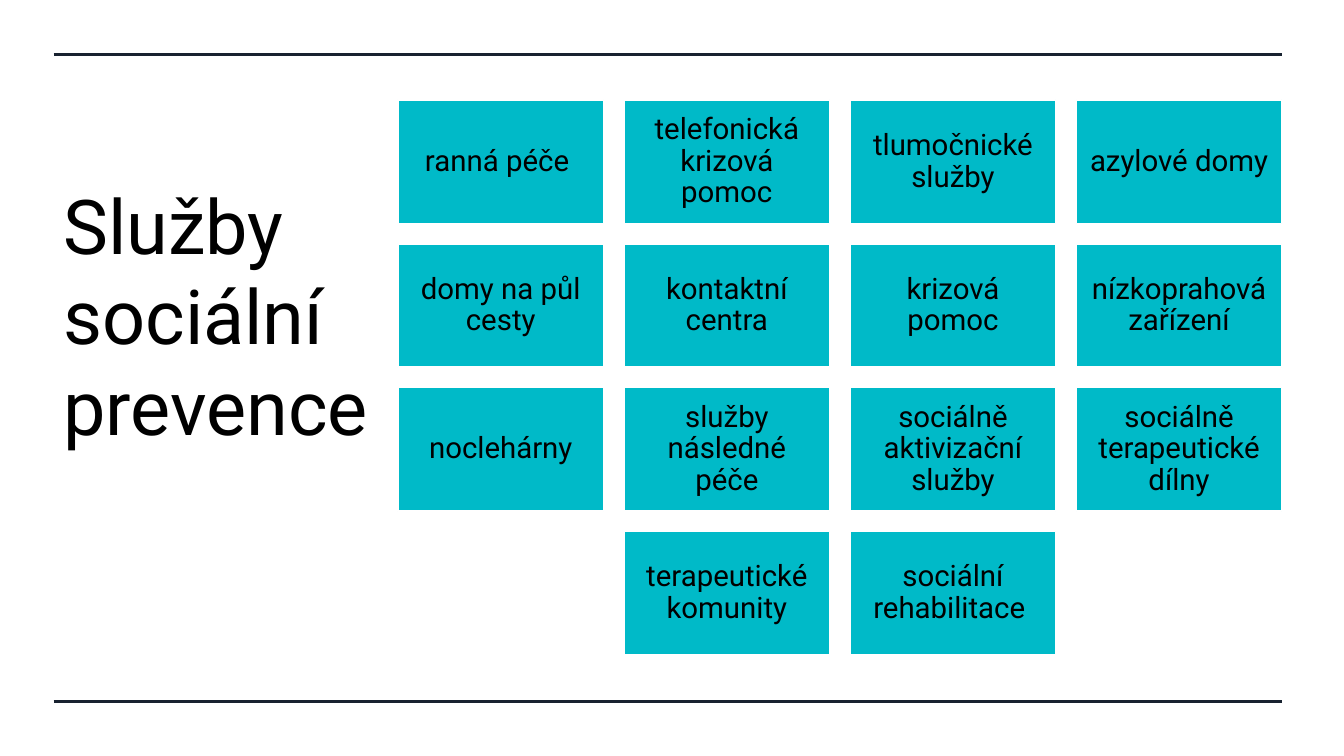
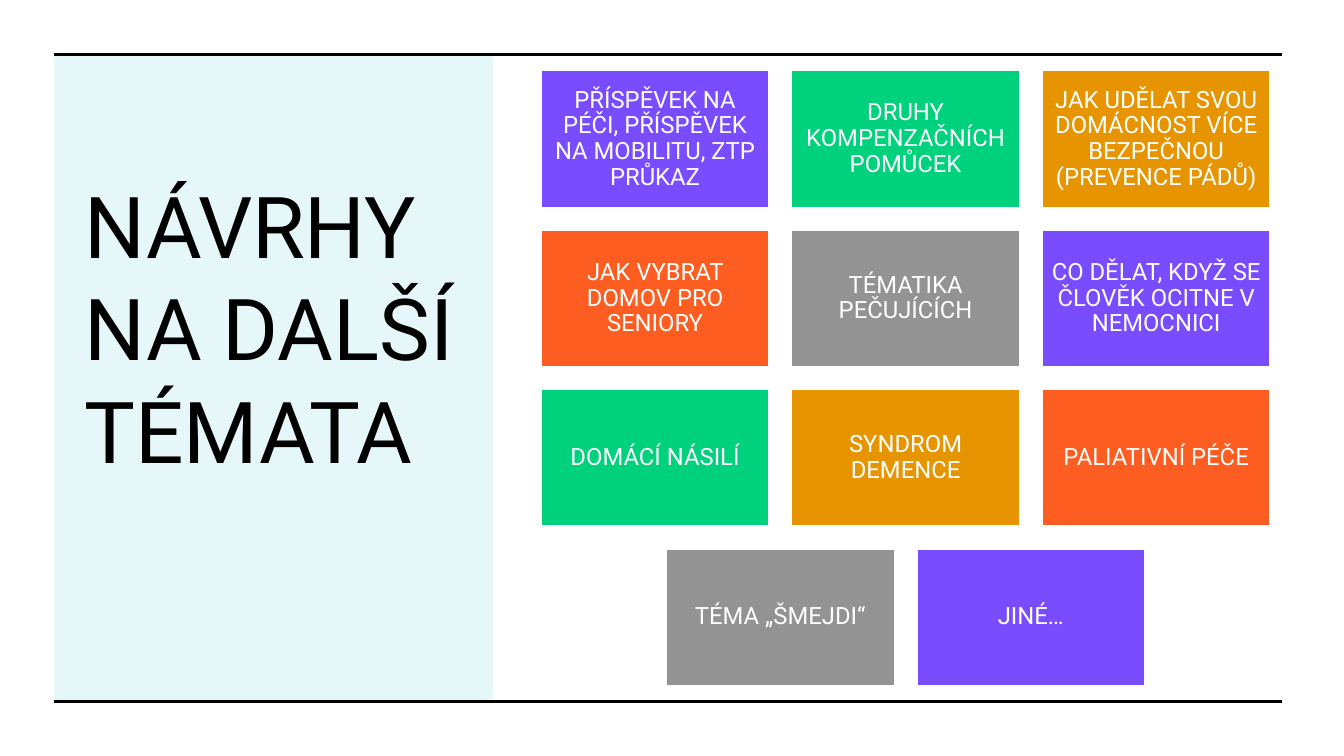
from dataclasses import dataclass
from math import ceil
from lxml import etree
from pptx import Presentation
from pptx.dml.color import RGBColor
from pptx.enum import shapes, text
from pptx.oxml import ns
from pptx.util import Cm, Pt


@dataclass(frozen=True)
class Theme:
    font: str = "Roboto"
    black: str = "000000"
    white: str = "FFFFFF"
    navy: str = "182230"
    teal: str = "00BAC8"
    hues: tuple = ("794DFF", "00D17D", "E69500", "FE5D21", "939393")
    rule: float = 2.25
    edge: float = 1


T = Theme()
MID, LOW = text.MSO_ANCHOR.MIDDLE, text.MSO_ANCHOR.BOTTOM

# Shared frame in cm: left, right, top, bottom
LEFT, RIGHT, TOP, BASE = 1.35, 32.31, 1.37, 17.68
PANEL = 11.07

# Content: title boxes are left, top, width, height in cm
SLIDES = [
    dict(
        title="Služby sociální prevence", size=54, box=(1.35, 2.72, 11.91, 8.76),
        anchor=LOW, rule=T.navy, panel=False,
        grid=dict(left=10.03, top=2.52, wide=5.18, cols=4, pad=0.22,
                  size=21, ink=T.black, fills=(T.teal,)),
        items=[
            "ranná péče ", "telefonická krizová pomoc", "tlumočnické služby",
            "azylové domy", "domy na půl cesty", "kontaktní centra",
            "krizová pomoc", "nízkoprahová zařízení", "noclehárny",
            "služby následné péče", "sociálně aktivizační služby",
            "sociálně terapeutické dílny", "terapeutické komunity",
            "sociální rehabilitace ",
        ],
    ),
    dict(
        title="NÁVRHY NA DALŠÍ TÉMATA", size=61, box=(1.88, 2.72, 10.54, 11.02),
        anchor=MID, rule=T.black, panel=True,
        grid=dict(left=13.64, top=1.78, wide=5.74, cols=3, pad=0.18,
                  size=17, ink=T.white, fills=T.hues),
        items=[
            "PŘÍSPĚVEK NA PÉČI, PŘÍSPĚVEK NA MOBILITU, ZTP PRŮKAZ",
            "DRUHY KOMPENZAČNÍCH POMŮCEK",
            "JAK UDĚLAT SVOU DOMÁCNOST VÍCE BEZPEČNOU (PREVENCE PÁDŮ)",
            "JAK VYBRAT DOMOV PRO SENIORY", "TÉMATIKA PEČUJÍCÍCH",
            "CO DĚLAT, KDYŽ SE ČLOVĚK OCITNE V NEMOCNICI", "DOMÁCÍ NÁSILÍ",
            "SYNDROM DEMENCE", "PALIATIVNÍ PÉČE", "TÉMA „ŠMEJDI“", "JINÉ…",
        ],
    ),
]


def rgb(code):
    return RGBColor.from_string(code)


def write(shape, words, size, ink, anchor):
    frame = shape.text_frame
    frame.word_wrap = True
    frame.vertical_anchor = anchor
    frame.text = words
    para = frame.paragraphs[0]
    para.font.name, para.font.size = T.font, Pt(size)
    para.font.color.rgb = rgb(ink)
    return frame, para


def block(slide, box, fill):
    shape = slide.shapes.add_shape(shapes.MSO_SHAPE.RECTANGLE, *map(Cm, box))
    shape.shadow.inherit = False
    shape.fill.solid()
    shape.fill.fore_color.rgb = rgb(fill)
    return shape


def panel(slide):
    shape = block(slide, (LEFT, TOP, PANEL, BASE - TOP), T.teal)
    shape.line.fill.background()
    tint = next(shape.fill._xPr.iter(ns.qn("a:srgbClr")))
    etree.SubElement(tint, ns.qn("a:alpha"), val="10000")


def rules(slide, color):
    for y in (TOP, BASE):
        line = slide.shapes.add_connector(
            shapes.MSO_CONNECTOR.STRAIGHT, Cm(LEFT), Cm(y), Cm(RIGHT), Cm(y))
        line.line.color.rgb = rgb(color)
        line.line.width = Pt(T.rule)
        etree.SubElement(line._element.spPr, ns.qn("a:effectLst"))


def tiles(slide, items, left, top, wide, cols, pad, size, ink, fills):
    high, gap = wide * 0.6, wide * 0.1
    last = ceil(len(items) / cols) - 1
    for i, words in enumerate(items):
        row, col = divmod(i, cols)
        # A short last row is centred
        if row == last:
            col += (cols * (last + 1) - len(items)) / 2
        box = (left + col * (wide + gap), top + row * (high + gap), wide, high)
        tile = block(slide, box, fills[i % len(fills)])
        tile.line.color.rgb = rgb(T.white)
        tile.line.width = Pt(T.edge)
        frame, para = write(tile, words, size, ink, MID)
        frame.margin_left = frame.margin_right = Cm(pad)
        frame.margin_top = frame.margin_bottom = Cm(pad)
        para.alignment = text.PP_ALIGN.CENTER
        para.line_spacing = 0.9


def main():
    deck = Presentation()
    deck.slide_width, deck.slide_height = Cm(33.87), Cm(19.05)
    for page in SLIDES:
        slide = deck.slides.add_slide(deck.slide_layouts[6])
        if page["panel"]:
            panel(slide)
        rules(slide, page["rule"])
        head = slide.shapes.add_textbox(*map(Cm, page["box"]))
        write(head, page["title"], page["size"], T.black, page["anchor"])
        tiles(slide, page["items"], **page["grid"])
    deck.save("out.pptx")


if __name__ == "__main__":
    main()
